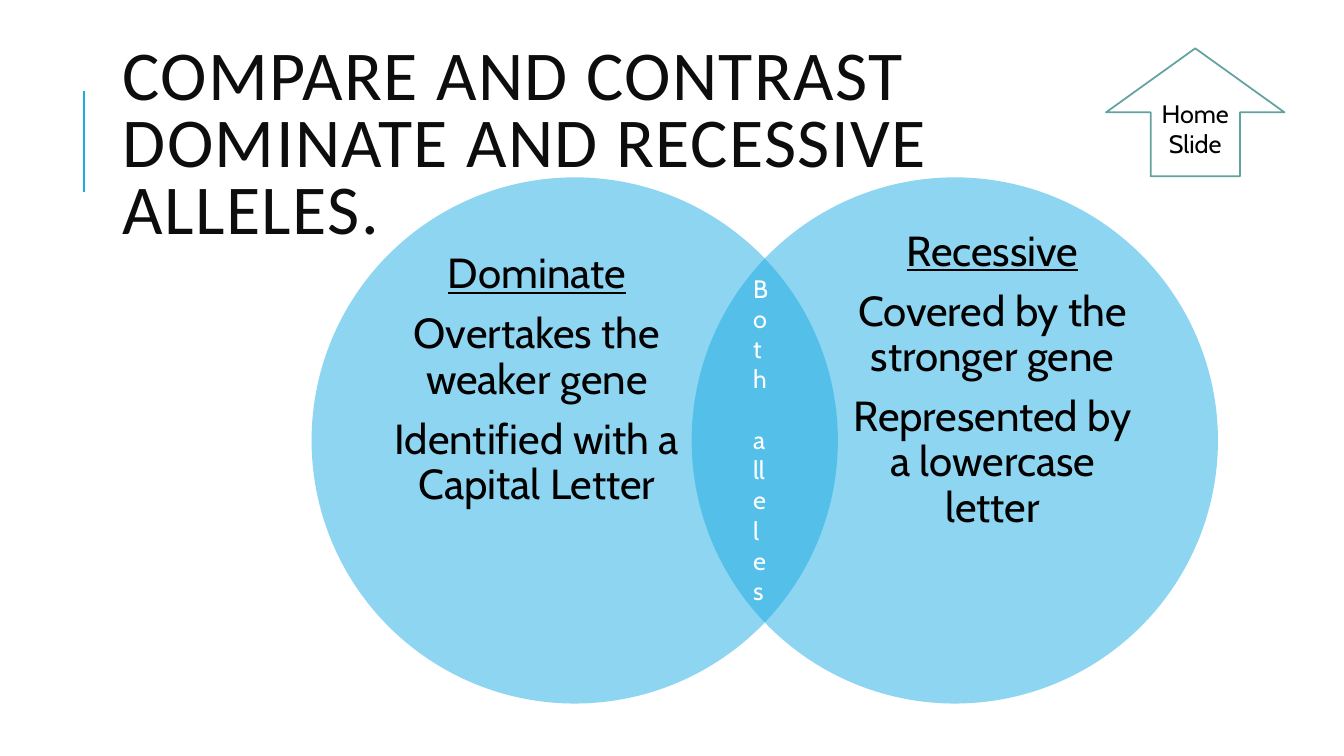
from pptx import Presentation
from pptx import util as u
from pptx.dml.color import RGBColor
from pptx.enum import shapes, text
from pptx.oxml.ns import qn
from lxml import etree

TITLE = "COMPARE AND CONTRAST DOMINATE AND RECESSIVE ALLELES."
TRAITS = [
    ("Dominate", "Overtakes the weaker gene", "Identified with a Capital Letter"),
    ("Recessive", "Covered by the stronger gene", "Represented by a lowercase letter"),
]
SHARED = "Both alleles"
HOME = "Home Slide"

THEME = {
    "title_font": "Calibri", "body_font": "Cabin",
    "title_size": 50, "trait_size": 30, "small_size": 18,
    "accent": "1CADE4", "title": "0D0D0D", "body": "000000",
    "white": "FFFFFF", "arrow_line": "62A39F", "circle_alpha": 50,
}

CIRCLE_LEFTS = (3.09, 6.86)
TRAIT_LEFTS = (3.82, 8.34)
CIRCLE_TOP, CIRCLE_SIZE = 1.76, 5.22
TRAIT_TOP, TRAIT_WIDTH, TRAIT_HEIGHT = 2.38, 3.01, 3.99
TRAIT_LIFT = 1.2  # bottom inset that raises the centred text
SHARED_LEFT, SHARED_WIDTH, SHARED_HEIGHT = 7.37, 0.32, 3.42
SHARED_TOP = CIRCLE_TOP + (CIRCLE_SIZE - SHARED_HEIGHT) / 2  # centred in the overlap


def color(name):
    return RGBColor.from_string(THEME[name])


def inches(*lengths):
    return [u.Inches(length) for length in lengths]


def style(para, font, size, ink):
    para.font.name = THEME[font]
    para.font.size = u.Pt(THEME[size])
    para.font.color.rgb = color(ink)


def add_text(page, at, lines, font, size, ink):
    """Add a wrapping text box with one paragraph per line of content."""
    box = page.shapes.add_textbox(*inches(*at))
    frame = box.text_frame
    frame.word_wrap = True
    frame.text = "\n".join(lines)
    for para in frame.paragraphs:
        style(para, font, size, ink)
    return frame


def add_filled(page, preset, at, fill):
    shape = page.shapes.add_shape(preset, *inches(*at))
    shape.shadow.inherit = False
    shape.fill.solid()
    shape.fill.fore_color.rgb = color(fill)
    return shape


def add_title(page):
    bar = page.shapes.add_connector(
        shapes.MSO_CONNECTOR.STRAIGHT, *inches(0.83, 1.9, 0.83, 0.9))
    bar.line.color.rgb = color("accent")
    bar.line.width = u.Pt(1.5)
    etree.SubElement(bar.element.spPr, qn("a:effectLst"))

    frame = add_text(page, (1.12, 0.64, 10.63, 1.64), [TITLE],
                     "title_font", "title_size", "title")
    frame.vertical_anchor = text.MSO_ANCHOR.MIDDLE
    para = frame.paragraphs[0]
    para.line_spacing = 0.8
    para.runs[0].font._element.set("spc", "100")


def add_circle(page, left):
    circle = add_filled(page, shapes.MSO_SHAPE.OVAL,
                        (left, CIRCLE_TOP, CIRCLE_SIZE, CIRCLE_SIZE), "accent")
    circle.line.fill.background()
    tint = circle.element.spPr.find(qn("a:solidFill"))[0]
    etree.SubElement(tint, qn("a:alpha"), val=str(THEME["circle_alpha"] * 1000))


def add_traits(page, left, lines):
    frame = add_text(page, (left, TRAIT_TOP, TRAIT_WIDTH, TRAIT_HEIGHT), lines,
                     "body_font", "trait_size", "body")
    frame.vertical_anchor = text.MSO_ANCHOR.MIDDLE
    frame.margin_left = frame.margin_right = frame.margin_top = 0
    frame.margin_bottom = u.Inches(TRAIT_LIFT)
    for para in frame.paragraphs:
        para.alignment = text.PP_ALIGN.CENTER
        para.line_spacing = 0.9
        para.space_after = u.Pt(THEME["trait_size"] * 0.35)
    frame.paragraphs[0].font.underline = True


def add_shared(page):
    """Add the label that runs down the overlap, one letter per line."""
    frame = add_text(page, (SHARED_LEFT, SHARED_TOP, SHARED_WIDTH, SHARED_HEIGHT),
                     [SHARED], "body_font", "small_size", "white")
    frame.auto_size = text.MSO_AUTO_SIZE.SHAPE_TO_FIT_TEXT


def add_home_arrow(page):
    arrow = add_filled(page, shapes.MSO_SHAPE.UP_ARROW,
                       (10.97, 0.48, 1.77, 1.27), "white")
    arrow.line.color.rgb = color("arrow_line")
    arrow.line.width = u.Pt(1.25)
    frame = arrow.text_frame
    frame.word_wrap = True
    frame.vertical_anchor = text.MSO_ANCHOR.MIDDLE
    frame.text = HOME
    para = frame.paragraphs[0]
    para.alignment = text.PP_ALIGN.CENTER
    style(para, "body_font", "small_size", "body")


def main():
    deck = Presentation()
    deck.slide_width, deck.slide_height = inches(13.33, 7.5)
    page = deck.slides.add_slide(deck.slide_layouts[6])

    add_title(page)
    for circle_left, trait_left, lines in zip(CIRCLE_LEFTS, TRAIT_LEFTS, TRAITS):
        add_circle(page, circle_left)
        add_traits(page, trait_left, lines)
    add_shared(page)
    add_home_arrow(page)

    deck.save("out.pptx")


if __name__ == "__main__":
    main()
